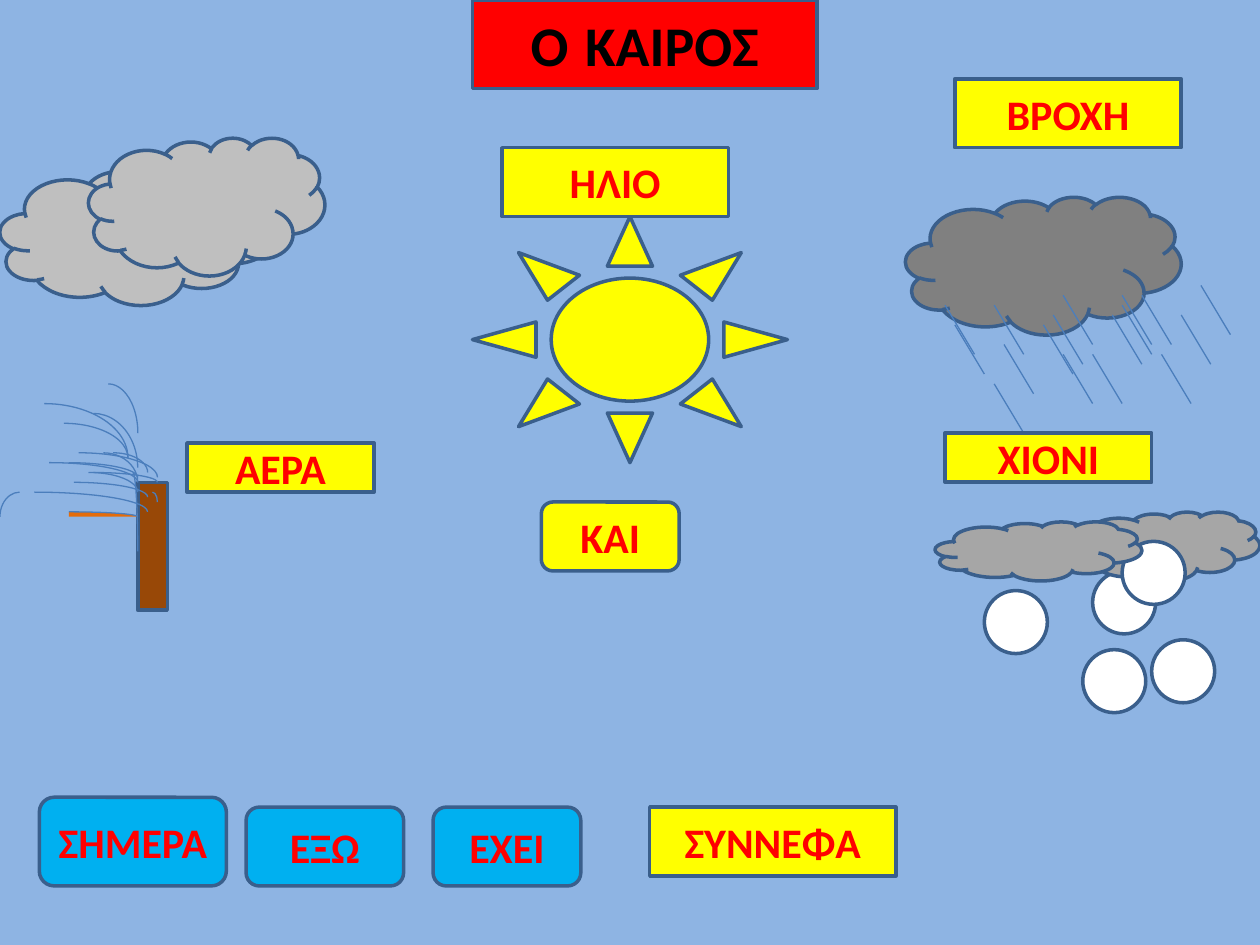
import pptx
import pptx.dml.color
import pptx.enum.shapes
import pptx.enum.text
import pptx.oxml.ns
import pptx.util
from lxml import etree

KIND = pptx.enum.shapes.MSO_SHAPE
PX = 914400 / 128  # the slide is 1280 x 960 px

YELLOW, BLUE, RED = "FFFF00", "00B0F0", "FF0000"
LIGHT_GREY, MID_GREY, DARK_GREY = "BFBFBF", "A6A6A6", "808080"
WHITE, BLACK, BROWN, ORANGE = "FFFFFF", "000000", "984807", "E46C0A"
SKY, OUTLINE, THIN_LINE = "8EB4E3", "3A5F8C", "4B7EBC"


def px(length):
    return pptx.util.Emu(round(length * PX))


def rgb(value):
    return pptx.dml.color.RGBColor.from_string(value)


class WeatherSlide:
    """Holds the style and the current slide."""

    label_format = {"name": "Calibri", "size": pptx.util.Pt(24), "bold": True}
    frame_format = {
        "word_wrap": True,
        "auto_size": pptx.enum.text.MSO_AUTO_SIZE.NONE,
        "vertical_anchor": pptx.enum.text.MSO_ANCHOR.MIDDLE,
    }

    def __init__(self, deck):
        self.slide = deck.slides.add_slide(deck.slide_layouts[5])
        self.slide.background.fill.solid()
        self.slide.background.fill.fore_color.rgb = rgb(SKY)

    def paint(self, part, fill, line, width):
        if fill:
            part.fill.solid()
            part.fill.fore_color.rgb = rgb(fill)
        else:
            part.fill.background()
        part.line.color.rgb = rgb(line)
        part.line.width = pptx.util.Pt(width)

    def shape(self, kind, box, fill=None, line=OUTLINE, width=2):
        part = self.slide.shapes.add_shape(kind, *map(px, box))
        part.shadow.inherit = False
        self.paint(part, fill, line, width)
        return part

    def add_words(self, part, runs):
        """Each run is its text, its colour and its changes to the label format."""
        for name, value in self.frame_format.items():
            setattr(part.text_frame, name, value)
        paragraph = part.text_frame.paragraphs[0]
        paragraph.alignment = pptx.enum.text.PP_ALIGN.CENTER
        for text, color, changes in runs:
            run = paragraph.add_run()
            run.text = text
            run.font.color.rgb = rgb(color)
            for name, value in {**self.label_format, **changes}.items():
                setattr(run.font, name, value)

    def title(self, box, runs):
        heading = self.slide.shapes.title
        for name, value in zip(("left", "top", "width", "height"), box):
            setattr(heading, name, px(value))
        self.paint(heading, RED, OUTLINE, 2)
        self.add_words(heading, runs)

    def label(self, text, box, fill=YELLOW, kind=KIND.RECTANGLE):
        self.add_words(self.shape(kind, box, fill), [(text, RED, {})])

    def snowball(self, left, top):
        self.shape(KIND.FLOWCHART_CONNECTOR, (left, top, 64, 64), WHITE)

    def raindrop(self, left, top):
        drop = self.slide.shapes.add_connector(
            pptx.enum.shapes.MSO_CONNECTOR.STRAIGHT,
            *map(px, (left, top, left + 30, top + 50)))
        drop.line.color.rgb = rgb(THIN_LINE)
        drop.line.width = pptx.util.Pt(0.75)
        etree.SubElement(drop._element.spPr, pptx.oxml.ns.qn("a:effectLst"))

    def gust(self, box, fill=None, flipped=False):
        arc = self.shape(KIND.ARC, box, fill, THIN_LINE, 0.75)
        if flipped:
            arc._element.spPr.find(pptx.oxml.ns.qn("a:xfrm")).set("flipH", "1")


def main():
    deck = pptx.Presentation()
    deck.slide_width, deck.slide_height = px(1280), px(960)
    weather = WeatherSlide(deck)

    # Title
    large = {"size": pptx.util.Pt(32)}
    weather.title((480, 0, 350, 90), [
        ("Ο", BLACK, large),
        (" ", BLACK, {}),
        (" ", WHITE, {"size": pptx.util.Pt(18), "bold": False}),
        ("ΚΑΙΡΟΣ", BLACK, large),
    ])

    # Clouds and sun
    weather.shape(KIND.CLOUD, (0, 170, 280, 140), LIGHT_GREY)
    weather.shape(KIND.SUN, (480, 220, 320, 250), YELLOW)
    weather.shape(KIND.CLOUD, (90, 140, 240, 140), LIGHT_GREY)

    # Rain
    weather.shape(KIND.CLOUD, (920, 200, 280, 140), DARK_GREY)
    for drop in [(1080, 300), (1060, 330), (960, 310), (1080, 360), (1130, 320),
                 (1110, 360), (1010, 310), (1140, 310), (1160, 300), (1220, 290),
                 (1070, 320), (1180, 360), (1200, 320), (1140, 300), (970, 330),
                 (1010, 390), (1020, 350)]:
        weather.raindrop(*drop)

    # Snow
    weather.snowball(1000, 600)
    weather.snowball(1110, 580)
    weather.shape(KIND.CLOUD, (1090, 520, 190, 70), MID_GREY)
    weather.snowball(1170, 650)
    weather.snowball(1140, 550)
    weather.shape(KIND.CLOUD, (950, 530, 210, 60), MID_GREY)
    weather.snowball(1100, 660)

    # Tree in the wind
    weather.shape(KIND.RECTANGLE, (140, 490, 30, 130), BROWN)
    for box in [(50, 420, 90, 110), (70, 460, 70, 60), (0, 490, 150, 30),
                (-40, 410, 170, 110), (30, 480, 130, 20), (-80, 500, 230, 40),
                (0, 430, 130, 70), (80, 390, 60, 100), (150, 500, 10, 20),
                (130, 480, 10, 160), (40, 480, 100, 40), (0, 460, 160, 50),
                (0, 470, 140, 30), (-40, 470, 180, 40), (80, 460, 70, 40)]:
        weather.gust(box)
    weather.gust((0, 520, 140, 10), fill=ORANGE)
    weather.gust((0, 500, 40, 50), flipped=True)

    # Weather words
    for text, box in [("ΣΥΝΝΕΦΑ", (660, 820, 250, 70)),
                      ("ΗΛΙΟ", (510, 150, 230, 70)),
                      ("ΒΡΟΧΗ", (970, 80, 230, 70)),
                      ("ΑΕΡΑ", (190, 450, 190, 50)),
                      ("ΧΙΟΝΙ", (960, 440, 210, 50))]:
        weather.label(text, box)

    # Sentence words
    for text, box, fill in [("ΣΗΜΕΡΑ", (40, 810, 190, 90), BLUE),
                            ("ΕΞΩ", (250, 820, 160, 80), BLUE),
                            ("ΕΧΕΙ", (440, 820, 150, 80), BLUE),
                            ("ΚΑΙ", (550, 510, 140, 70), YELLOW)]:
        weather.label(text, box, fill, KIND.ROUNDED_RECTANGLE)

    deck.save("out.pptx")


if __name__ == "__main__":
    main()
